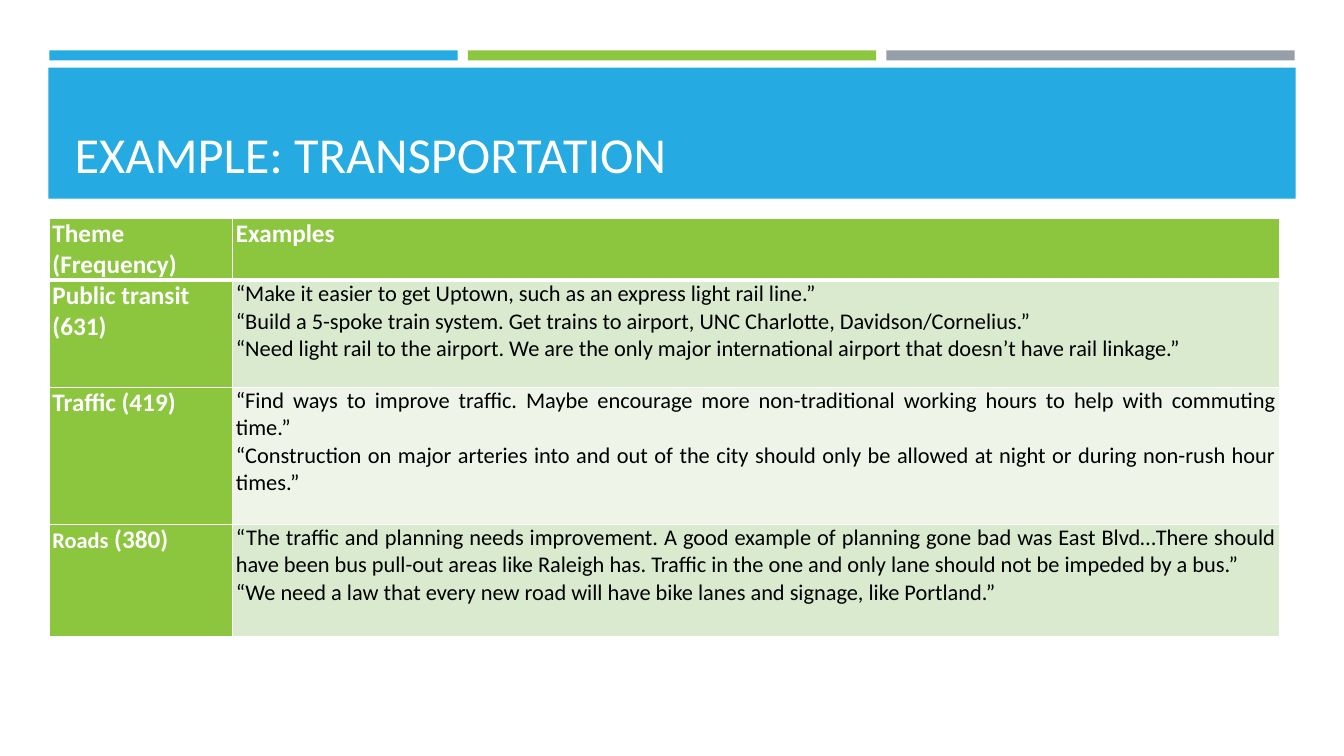
"""Build the transportation examples slide: title band and theme table."""
from lxml import etree
from pptx import Presentation
from pptx import util as u
from pptx.dml.color import RGBColor
from pptx.enum import shapes, text
from pptx.oxml.ns import qn

FONT = "Calibri"
HUES = {
    "blue": "25AAE1", "green": "8CC63F", "gray": "969FA7",
    "pale": "DAEACF", "mist": "EEF5E8", "white": "FFFFFF", "black": "000000",
}
HEAD = ["Theme (Frequency)", "Examples"]
ROWS = [
    ([("Public transit (631)", 18)], [
        "“Make it easier to get Uptown, such as an express light rail line.”",
        "“Build a 5-spoke train system. Get trains to airport, UNC Charlotte, Davidson/Cornelius.”",
        "“Need light rail to the airport. We are the only major international airport "
        "that doesn’t have rail linkage.”",
    ]),
    ([("Traffic (419)", 18)], [
        "“Find ways to improve traffic. Maybe encourage more non-traditional working hours "
        "to help with commuting time.”",
        "“Construction on major arteries into and out of the city should only be allowed "
        "at night or during non-rush hour times.”",
    ]),
    ([("Roads", 16), (" (380)", 18)], [
        "“The traffic and planning needs improvement. A good example of planning gone bad was "
        "East Blvd…There should have been bus pull-out areas like Raleigh has. Traffic in the "
        "one and only lane should not be impeded by a bus.”",
        "“We need a law that every new road will have bike lanes and signage, like Portland.”",
    ]),
]
WIDTHS = [1.82, 10.38]
HEIGHTS = [0.61, 1.06, 1.36, 1.12]


def tint(name):
    return RGBColor.from_string(HUES[name])


def style(font, size, hue, bold=False):
    font.name, font.size, font.bold = FONT, u.Pt(size), bold
    font.color.rgb = tint(hue)


def add_bar(slide, left, top, width, height, hue):
    bar = slide.shapes.add_shape(
        shapes.MSO_SHAPE.RECTANGLE, *map(u.Inches, (left, top, width, height)))
    bar.shadow.inherit = False
    bar.fill.solid()
    bar.fill.fore_color.rgb = tint(hue)
    bar.line.fill.background()


def set_title(slide, words):
    title = slide.shapes.title
    title.left, title.top = u.Inches(0.64), u.Inches(0.77)
    title.width, title.height = u.Inches(12.06), u.Inches(1.11)
    frame = title.text_frame
    frame.text = words
    frame.word_wrap = True
    frame.auto_size = text.MSO_AUTO_SIZE.NONE
    frame.vertical_anchor = text.MSO_ANCHOR.BOTTOM
    para = frame.paragraphs[0]
    para.alignment = text.PP_ALIGN.LEFT
    para.line_spacing = 0.9
    style(para.font, 36, "white")
    title.element.getparent().append(title.element)


def set_edges(cell, top, base):
    props = cell._tc.get_or_add_tcPr()
    for side, width in (("L", 1), ("R", 1), ("T", top), ("B", base)):
        line = etree.SubElement(props, qn(f"a:ln{side}"), w=str(u.Pt(width)))
        fill = etree.SubElement(line, qn("a:solidFill"))
        etree.SubElement(fill, qn("a:srgbClr"), val=HUES["white"])


def set_cell(cell, paras, hue, ink, bold, align, top=1, base=1):
    set_edges(cell, top, base)
    cell.fill.solid()
    cell.fill.fore_color.rgb = tint(hue)
    cell.margin_left = cell.margin_right = u.Inches(0.03)
    cell.margin_top = cell.margin_bottom = 0
    frame = cell.text_frame
    for index, runs in enumerate(paras):
        para = frame.add_paragraph() if index else frame.paragraphs[0]
        para.alignment = align
        style(para.font, runs[0][1], ink, bold)
        for words, size in runs:
            run = para.add_run()
            run.text = words
            if size != runs[0][1]:
                style(run.font, size, ink, bold)


def add_themes(slide):
    table = slide.shapes.add_table(
        len(HEIGHTS), len(WIDTHS), u.Inches(0.49), u.Inches(2.17),
        u.Inches(sum(WIDTHS)), u.Inches(sum(HEIGHTS))).table
    for column, width in zip(table.columns, WIDTHS):
        column.width = u.Inches(width)
    for row, height in zip(table.rows, HEIGHTS):
        row.height = u.Inches(height)
    left, both = text.PP_ALIGN.LEFT, text.PP_ALIGN.JUSTIFY
    for col, label in enumerate(HEAD):
        set_cell(table.cell(0, col), [[(label, 18)]], "green", "white", True, both, base=3)
    for row, (theme, quotes) in enumerate(ROWS, 1):
        top = 3 if row == 1 else 1
        shade = "pale" if row % 2 else "mist"
        set_cell(table.cell(row, 0), [theme], "green", "white", True, left, top)
        lines = [[(quote, 16)] for quote in quotes]
        set_cell(table.cell(row, 1), lines, shade, "black", False, both, top)


def main():
    deck = Presentation()
    deck.slide_width, deck.slide_height = u.Inches(13.33), u.Inches(7.5)
    slide = deck.slides.add_slide(deck.slide_layouts[5])
    for index, hue in enumerate(("blue", "green", "gray")):
        add_bar(slide, 0.49 + 4.15 * index, 0.5, 4.05, 0.1, hue)
    add_bar(slide, 0.48, 0.67, 12.37, 1.3, "blue")
    set_title(slide, "EXAMPLE: TRANSPORTATION")
    add_themes(slide)
    deck.save("out.pptx")


if __name__ == "__main__":
    main()
